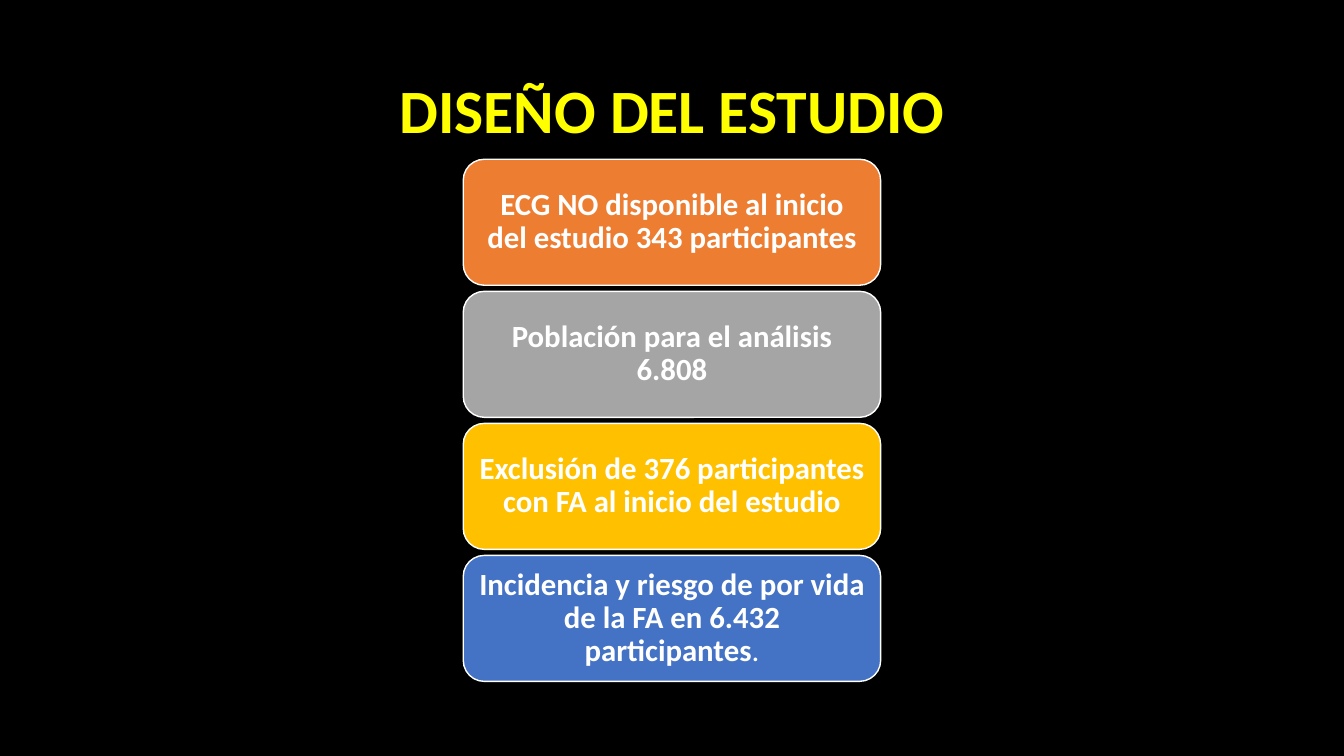
import pptx
import pptx.util
import pptx.dml.color
import pptx.enum.shapes
import pptx.enum.text

Inches = pptx.util.Inches

TITLE = "DISEÑO DEL ESTUDIO"
# Each step: fill colour, then (text, bold) spans
STEPS = [
    ("ED7D31", [("ECG NO disponible al inicio del estudio 343 participantes", True)]),
    ("A5A5A5", [("Población para el análisis 6.808", True)]),
    ("FFC000", [("Exclusión de 376 participantes con FA al inicio del estudio", True)]),
    ("4472C4", [("Incidencia y riesgo de por vida de la FA en 6.432 participantes", True),
                (".", False)]),
]
THEME = {
    "font": "Calibri",
    "background": "000000",
    "title": "FFFF00",
    "text": "FFFFFF",
    "outline": "FFFFFF",
    "title_size": 44,
    "step_size": 22,
    "outline_width": 1,
}
PAGE_WIDTH, PAGE_HEIGHT = 13.33, 7.5
TITLE_BOX = (0.92, 0.4, 11.5, 1.45)
STEP_WIDTH, STEP_HEIGHT = 4.14, 1.25
STEP_TOP, STEP_GAP = 1.58, 0.06
FRAME_FORMAT = {
    "word_wrap": True,
    "vertical_anchor": pptx.enum.text.MSO_ANCHOR.MIDDLE,
    "margin_left": Inches(0.09),
    "margin_right": Inches(0.09),
    "margin_top": Inches(0.05),
    "margin_bottom": Inches(0.05),
}
PARA_FORMAT = {"alignment": pptx.enum.text.PP_ALIGN.CENTER, "line_spacing": 0.9}


def color(name):
    return pptx.dml.color.RGBColor.from_string(name)


def apply_format(target, values):
    for name, value in values.items():
        setattr(target, name, value)


def write_text(box, spans, size, text_color):
    """Fill the box with one centred paragraph of (text, bold) spans."""
    apply_format(box.text_frame, FRAME_FORMAT)
    para = box.text_frame.paragraphs[0]
    apply_format(para, PARA_FORMAT)
    for text, bold in spans:
        span = para.add_run()
        span.text = text
        apply_format(span.font, {"name": THEME["font"], "size": pptx.util.Pt(size), "bold": bold})
        span.font.color.rgb = color(text_color)


def add_step(page, index, fill, spans):
    left = (PAGE_WIDTH - STEP_WIDTH) / 2
    top = STEP_TOP + index * (STEP_HEIGHT + STEP_GAP)
    box = page.shapes.add_shape(
        pptx.enum.shapes.MSO_SHAPE.ROUNDED_RECTANGLE,
        *map(Inches, (left, top, STEP_WIDTH, STEP_HEIGHT)))
    box.shadow.inherit = False
    box.fill.solid()
    box.fill.fore_color.rgb = color(fill)
    box.line.color.rgb = color(THEME["outline"])
    box.line.width = pptx.util.Pt(THEME["outline_width"])
    write_text(box, spans, THEME["step_size"], THEME["text"])


def main():
    deck = pptx.Presentation()
    apply_format(deck, {"slide_width": Inches(PAGE_WIDTH), "slide_height": Inches(PAGE_HEIGHT)})
    page = deck.slides.add_slide(deck.slide_layouts[6])
    page.background.fill.solid()
    page.background.fill.fore_color.rgb = color(THEME["background"])

    title = page.shapes.add_textbox(*map(Inches, TITLE_BOX))
    write_text(title, [(TITLE, True)], THEME["title_size"], THEME["title"])
    for index, (fill, spans) in enumerate(STEPS):
        add_step(page, index, fill, spans)
    deck.save("out.pptx")


if __name__ == "__main__":
    main()
